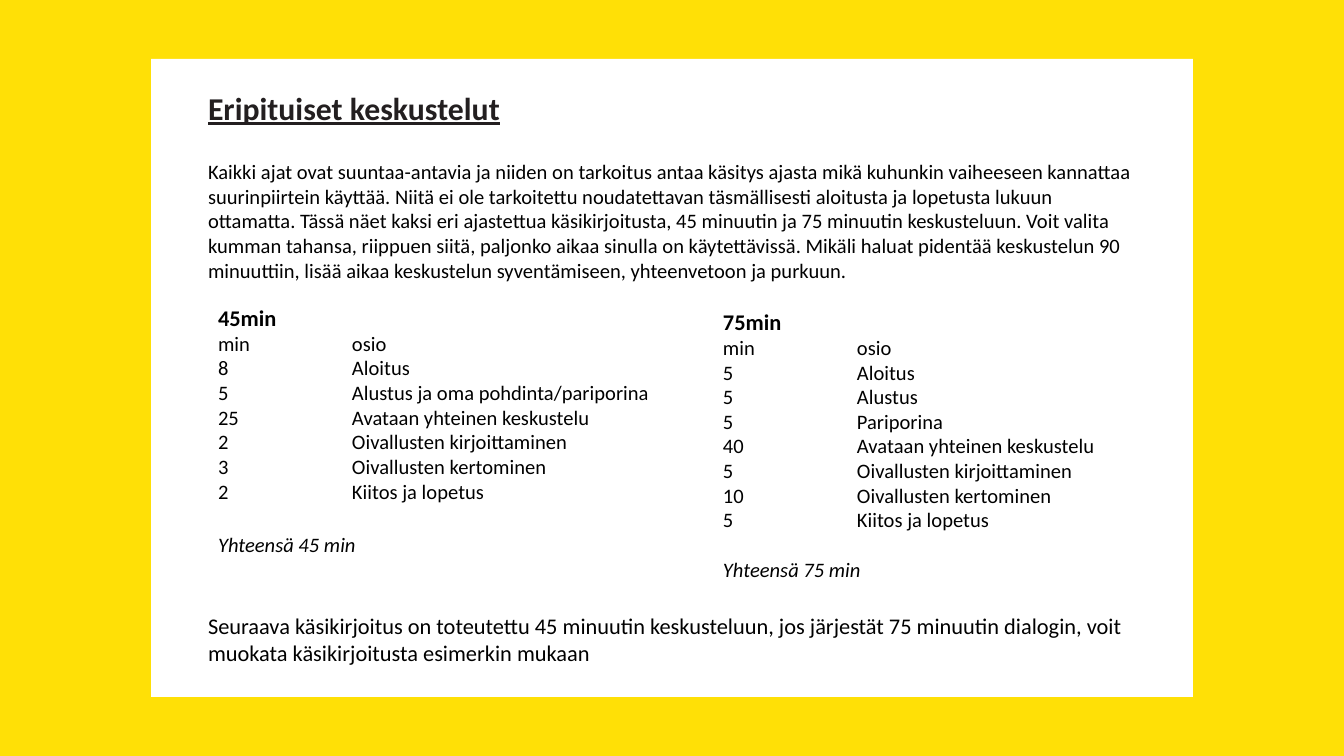
from dataclasses import dataclass
from lxml import etree
from pptx import Presentation
from pptx.dml.color import RGBColor
from pptx.enum.shapes import MSO_SHAPE
from pptx.enum.text import MSO_ANCHOR, MSO_AUTO_SIZE, PP_ALIGN
from pptx.oxml.ns import qn
from pptx.util import Emu, Pt

RECT = MSO_SHAPE.RECTANGLE
TOP = MSO_ANCHOR.TOP
FIXED = MSO_AUTO_SIZE.NONE
LEFT = PP_ALIGN.LEFT


@dataclass(frozen=True)
class Theme:
    """Hold the colours, font and type sizes."""
    yellow: str = "FFE006"
    white: str = "FFFFFF"
    dark: str = "231F20"
    black: str = "000000"
    font: str = "Calibri"
    title: int = 17
    head: int = 12
    body: int = 11


THEME = Theme()
WIDTH, HEIGHT = 1344, 756
TAB = 134

INTRO = (
    "Kaikki ajat ovat suuntaa-antavia ja niiden on tarkoitus antaa käsitys ajasta mikä "
    "kuhunkin vaiheeseen kannattaa suurinpiirtein käyttää. Niitä ei ole tarkoitettu "
    "noudatettavan täsmällisesti aloitusta ja lopetusta lukuun ottamatta. Tässä näet kaksi "
    "eri ajastettua käsikirjoitusta, 45 minuutin ja 75 minuutin keskusteluun. Voit valita "
    "kumman tahansa, riippuen siitä, paljonko aikaa sinulla on käytettävissä. Mikäli haluat "
    "pidentää keskustelun 90 minuuttiin, lisää aikaa keskustelun syventämiseen, "
    "yhteenvetoon ja purkuun."
)
NOTE = (
    "Seuraava käsikirjoitus on toteutettu 45 minuutin keskusteluun, jos järjestät 75 "
    "minuutin dialogin, voit muokata käsikirjoitusta esimerkin mukaan"
)
SHORT = [
    (8, "Aloitus"),
    (5, "Alustus ja oma pohdinta/pariporina"),
    (25, "Avataan yhteinen keskustelu"),
    (2, "Oivallusten kirjoittaminen"),
    (3, "Oivallusten kertominen"),
    (2, "Kiitos ja lopetus"),
]
LONG = [
    (5, "Aloitus"),
    (5, "Alustus"),
    (5, "Pariporina"),
    (40, "Avataan yhteinen keskustelu"),
    (5, "Oivallusten kirjoittaminen"),
    (10, "Oivallusten kertominen"),
    (5, "Kiitos ja lopetus"),
]


def px(count):
    """Turn px into EMU."""
    return Emu(round(count * 914400 / 134.4))


def set_frame(shape, box):
    """Place a text shape and clear its margins."""
    shape.left, shape.top, shape.width, shape.height = map(px, box)
    frame = shape.text_frame
    frame.word_wrap = True
    frame.auto_size = FIXED
    frame.vertical_anchor = TOP
    frame.margin_left = frame.margin_top = 0
    frame.margin_right = frame.margin_bottom = 0
    return frame


def add_run(para, text, size, color=THEME.black, bold=False, slant=False, line=False):
    """Add one styled run to a paragraph."""
    run = para.add_run()
    run.text = text
    font = run.font
    font.name, font.size = THEME.font, Pt(size)
    font.color.rgb = RGBColor.from_string(color)
    font.bold, font.italic, font.underline = bold, slant, line


def add_panel(slide, box, color):
    """Add a plain panel behind the placeholders."""
    panel = slide.shapes.add_shape(RECT, *map(px, box))
    panel.shadow.inherit = False
    panel.fill.solid()
    panel.fill.fore_color.rgb = RGBColor.from_string(color)
    panel.line.fill.background()
    slide.shapes.title.element.addprevious(panel.element)


def add_intro(slide, box):
    """Fill the title and body placeholders."""
    left, top, width, height = box
    title = set_frame(slide.shapes.title, (left, top, width, 45)).paragraphs[0]
    title.alignment = LEFT
    title.line_spacing = 1.15
    add_run(title, "Eripituiset keskustelut", THEME.title, THEME.dark, bold=True, line=True)
    body = set_frame(slide.placeholders[1], (left, top + 76, width, height - 76)).paragraphs[0]
    body.space_before = Pt(0)
    props = body._p.get_or_add_pPr()
    props.set("marL", "0")
    props.set("indent", "0")
    etree.SubElement(props, qn("a:buNone"))
    add_run(body, INTRO, THEME.body)


def add_plan(slide, box, total, steps, gap):
    """Add a timed list of parts with its total."""
    frame = set_frame(slide.shapes.add_textbox(*map(px, box)), box)
    add_run(frame.paragraphs[0], f"{total}min", THEME.head, bold=True)
    for time, part in [("min", "osio"), *steps]:
        para = frame.add_paragraph()
        tabs = etree.SubElement(para._p.get_or_add_pPr(), qn("a:tabLst"))
        etree.SubElement(tabs, qn("a:tab"), pos=str(px(TAB)), algn="l")
        add_run(para, f"{time}\t{part}", THEME.body)
    para = frame.add_paragraph()
    para.space_before = px(gap)
    add_run(para, f"Yhteensä {total} min", THEME.body, slant=True)


def add_note(slide, box):
    """Add the closing note."""
    frame = set_frame(slide.shapes.add_textbox(*map(px, box)), box)
    add_run(frame.paragraphs[0], NOTE, THEME.head)


def main():
    """Build and save the slide."""
    deck = Presentation()
    deck.slide_width, deck.slide_height = px(WIDTH), px(HEIGHT)
    slide = deck.slides.add_slide(deck.slide_layouts[1])
    add_panel(slide, (0, 0, WIDTH, HEIGHT), THEME.yellow)
    add_panel(slide, (151, 59, 1042, 638), THEME.white)
    add_intro(slide, (208, 83, 929, 204))
    add_plan(slide, (218, 304, 480, 260), 45, SHORT, 29)
    add_plan(slide, (723, 308, 392, 276), 75, LONG, 25)
    add_note(slide, (208, 612, 929, 56))
    deck.save("out.pptx")


if __name__ == "__main__":
    main()
